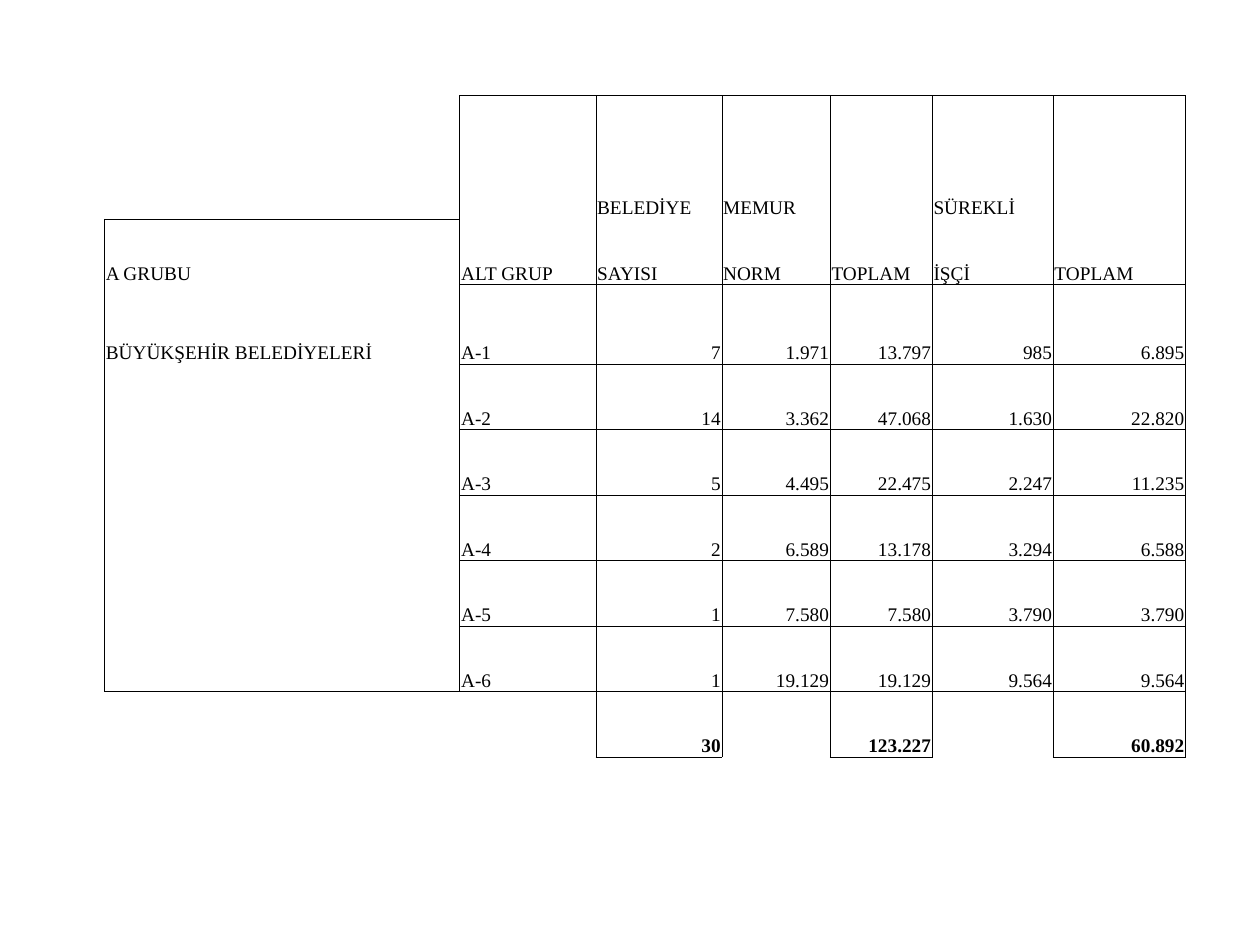
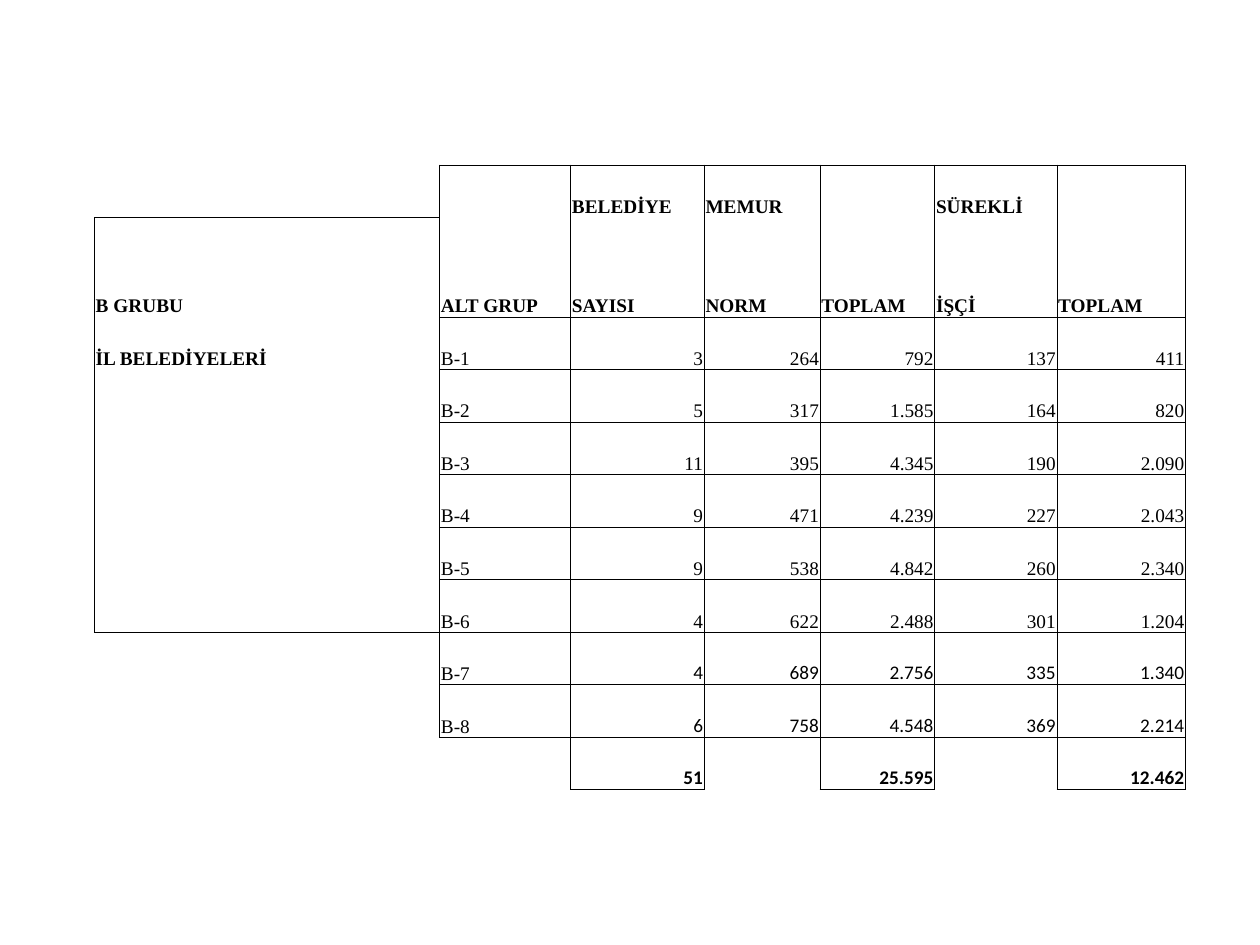
from dataclasses import dataclass

from lxml.etree import SubElement
from pptx import Presentation
from pptx.dml.color import RGBColor
from pptx.enum.text import MSO_ANCHOR, PP_ALIGN
from pptx.oxml.ns import qn
from pptx.util import Inches, Pt

BLANK_LAYOUT = 6
HEADER_ROWS = 2
LAST_GROUP_ROW = 7  # bottom row of the box around the group name
ALL_SIDES = frozenset("LRTB")
NEIGHBOURS = {"L": (0, -1, "R"), "R": (0, 1, "L"), "T": (-1, 0, "B"), "B": (1, 0, "T")}


@dataclass(frozen=True)
class Theme:
    ink: str = "000000"
    font: str = "Times New Roman"
    alternate_font: str = "Calibri"
    text_size: Pt = Pt(11)
    border_width: Pt = Pt(0.5)
    cell_margin: Inches = Inches(0.01)


THEME = Theme()


@dataclass
class StaffTable:
    group: str
    group_name: str
    subgroups: list
    totals: list
    left: float
    top: float
    height: float
    column_widths: list
    tall_rows: dict
    bold_headings: bool = False
    alternate_font_from: int = 99

    def rows(self):
        upper = ["", "", "BELEDİYE", "MEMUR", "", "SÜREKLİ", ""]
        lower = [self.group + " GRUBU", "ALT GRUP", "SAYISI", "NORM",
                 "TOPLAM", "İŞÇİ", "TOPLAM"]
        body = [["", f"{self.group}-{number}", *figures]
                for number, figures in enumerate(self.subgroups, 1)]
        body[0][0] = self.group_name
        count, officers, workers = self.totals
        return [upper, lower, *body, ["", "", count, "", officers, "", workers]]

    def row_heights(self, row_count):
        """Give the tall rows their height and share the rest equally."""
        shared = (self.height - sum(self.tall_rows.values())) / (row_count - len(self.tall_rows))
        return [self.tall_rows.get(row, shared) for row in range(row_count)]


METROPOLITAN = StaffTable(
    group="A",
    group_name="BÜYÜKŞEHİR BELEDİYELERİ",
    subgroups=[
        ("7", "1.971", "13.797", "985", "6.895"),
        ("14", "3.362", "47.068", "1.630", "22.820"),
        ("5", "4.495", "22.475", "2.247", "11.235"),
        ("2", "6.589", "13.178", "3.294", "6.588"),
        ("1", "7.580", "7.580", "3.790", "3.790"),
        ("1", "19.129", "19.129", "9.564", "9.564"),
    ],
    totals=["30", "123.227", "60.892"],
    left=0.83, top=0.76, height=5.25,
    column_widths=[2.82, 1.08, 1, 0.86, 0.81, 0.96, 1.05],
    tall_rows={0: 0.98, 2: 0.63},
)

PROVINCIAL = StaffTable(
    group="B",
    group_name="İL BELEDİYELERİ",
    subgroups=[
        ("3", "264", "792", "137", "411"),
        ("5", "317", "1.585", "164", "820"),
        ("11", "395", "4.345", "190", "2.090"),
        ("9", "471", "4.239", "227", "2.043"),
        ("9", "538", "4.842", "260", "2.340"),
        ("4", "622", "2.488", "301", "1.204"),
        ("4", "689", "2.756", "335", "1.340"),
        ("6", "758", "4.548", "369", "2.214"),
    ],
    totals=["51", "25.595", "12.462"],
    left=0.75, top=1.31, height=4.96,
    column_widths=[2.74, 1.04, 1.06, 0.92, 0.91, 0.97, 1.02],
    tall_rows={1: 0.79},
    bold_headings=True,
    alternate_font_from=8,
)


def own_sides(rows, row, column):
    """Sides of a cell that belong to the box it is part of."""
    if not (0 <= row < len(rows) and 0 <= column < len(rows[0])):
        return frozenset()
    if column == 0:
        if not 1 <= row <= LAST_GROUP_ROW:
            return frozenset()
        ends = {1: "T", LAST_GROUP_ROW: "B"}
        return frozenset("LR" + ends.get(row, ""))
    if row < HEADER_ROWS:
        return ALL_SIDES - {"B" if row == 0 else "T"}
    if row == len(rows) - 1 and not rows[row][column]:
        return frozenset()
    return ALL_SIDES


def drawn_sides(rows, row, column):
    """Own sides plus those that a neighbouring cell shares."""
    shared = {side for side, (down, right, opposite) in NEIGHBOURS.items()
              if opposite in own_sides(rows, row + down, column + right)}
    return own_sides(rows, row, column) | shared


def draw_borders(cell, sides):
    properties = cell._tc.get_or_add_tcPr()
    for side in "LRTB":
        line = SubElement(properties, qn("a:ln" + side), w=str(THEME.border_width))
        if side in sides:
            fill = SubElement(line, qn("a:solidFill"))
            SubElement(fill, qn("a:srgbClr"), val=THEME.ink)
        else:
            SubElement(line, qn("a:noFill"))


def write_cell(cell, text, font_name, bold, align):
    cell.vertical_anchor = MSO_ANCHOR.BOTTOM
    cell.margin_left = cell.margin_right = cell.margin_top = THEME.cell_margin
    cell.margin_bottom = 0
    cell.text_frame.text = text
    paragraph = cell.text_frame.paragraphs[0]
    paragraph.alignment = align
    font = paragraph.runs[0].font if text else paragraph.font
    font.name = font_name
    font.size = THEME.text_size
    font.bold = bold
    font.color.rgb = RGBColor.from_string(THEME.ink)


def add_staff_table(slide, staff):
    rows = staff.rows()
    table = slide.shapes.add_table(
        len(rows), len(rows[0]), Inches(staff.left), Inches(staff.top),
        Inches(sum(staff.column_widths)), Inches(staff.height)).table
    table.first_row = table.horz_banding = False
    for column, width in zip(table.columns, staff.column_widths):
        column.width = Inches(width)
    for row, height in zip(table.rows, staff.row_heights(len(rows))):
        row.height = Inches(height)

    for r, texts in enumerate(rows):
        for c, text in enumerate(texts):
            cell = table.cell(r, c)
            is_figure = r >= HEADER_ROWS and c >= 2
            is_heading = r < HEADER_ROWS or c == 0
            is_total = r == len(rows) - 1
            alternate = is_figure and r >= staff.alternate_font_from
            write_cell(cell, text,
                       THEME.alternate_font if alternate else THEME.font,
                       is_total or (is_heading and staff.bold_headings),
                       PP_ALIGN.RIGHT if is_figure else PP_ALIGN.LEFT)
            draw_borders(cell, drawn_sides(rows, r, c))
            cell.fill.background()


def main():
    deck = Presentation()
    deck.slide_width, deck.slide_height = Inches(10), Inches(7.5)
    for staff in (METROPOLITAN, PROVINCIAL):
        slide = deck.slides.add_slide(deck.slide_layouts[BLANK_LAYOUT])
        add_staff_table(slide, staff)
    deck.save("out.pptx")


if __name__ == "__main__":
    main()
